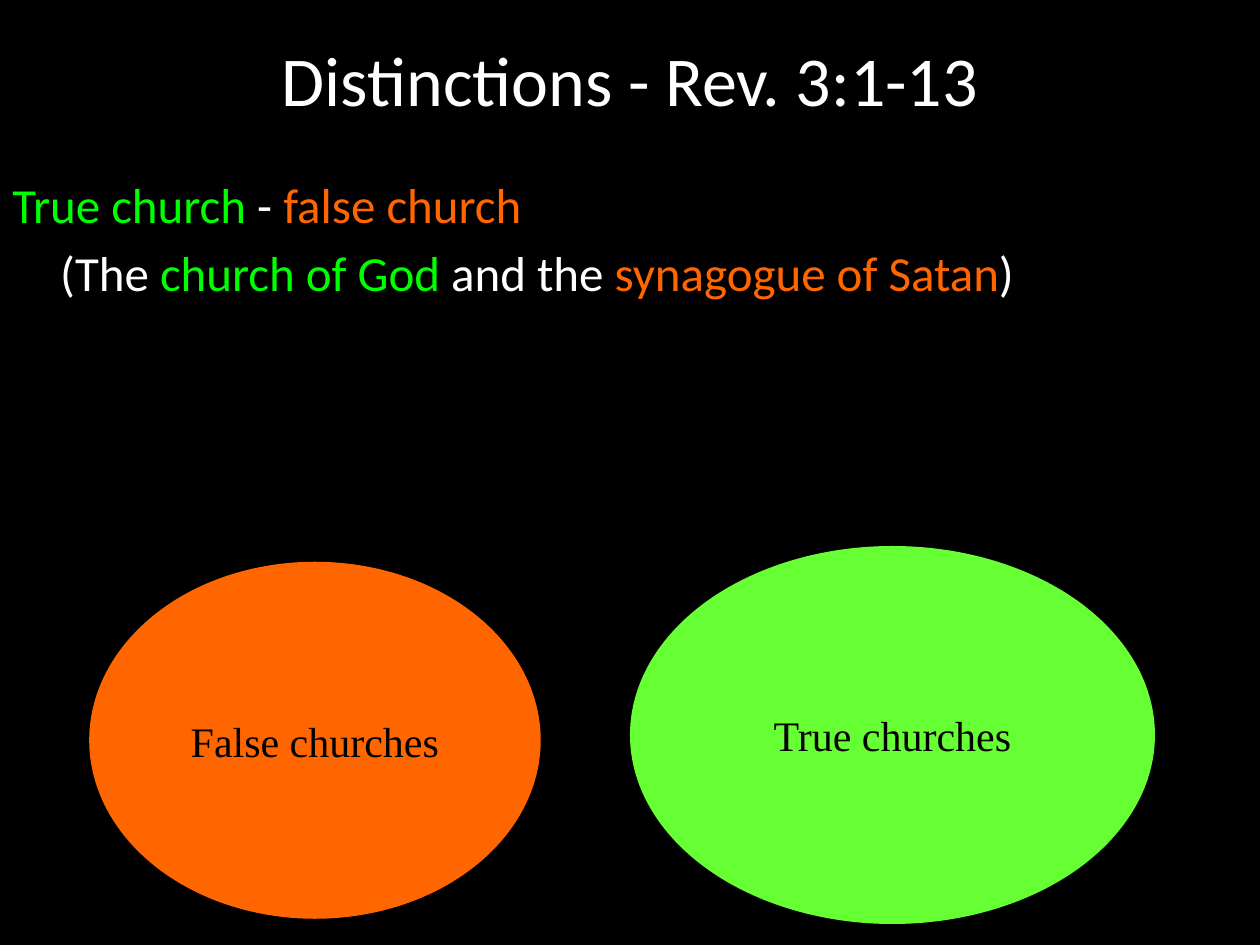
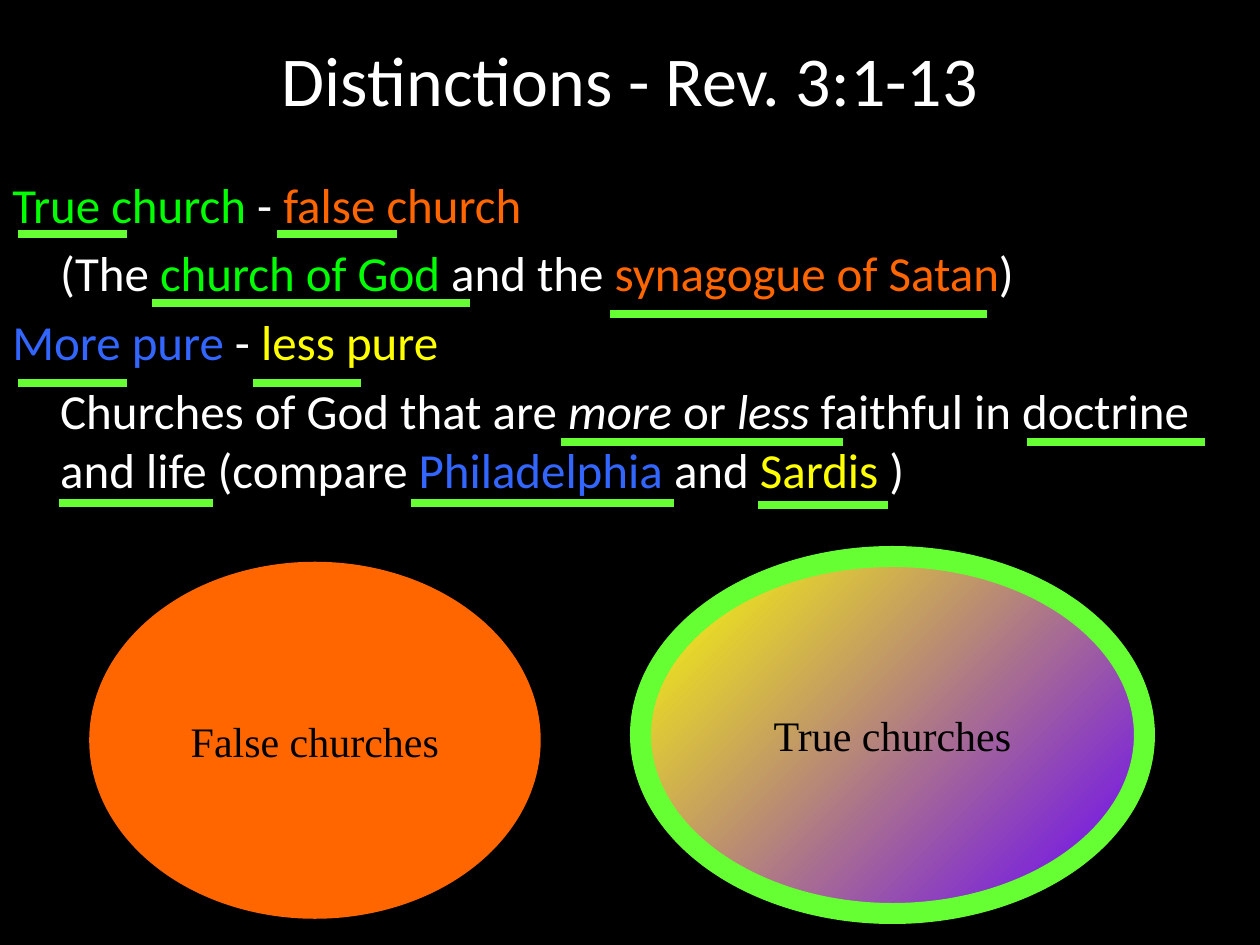
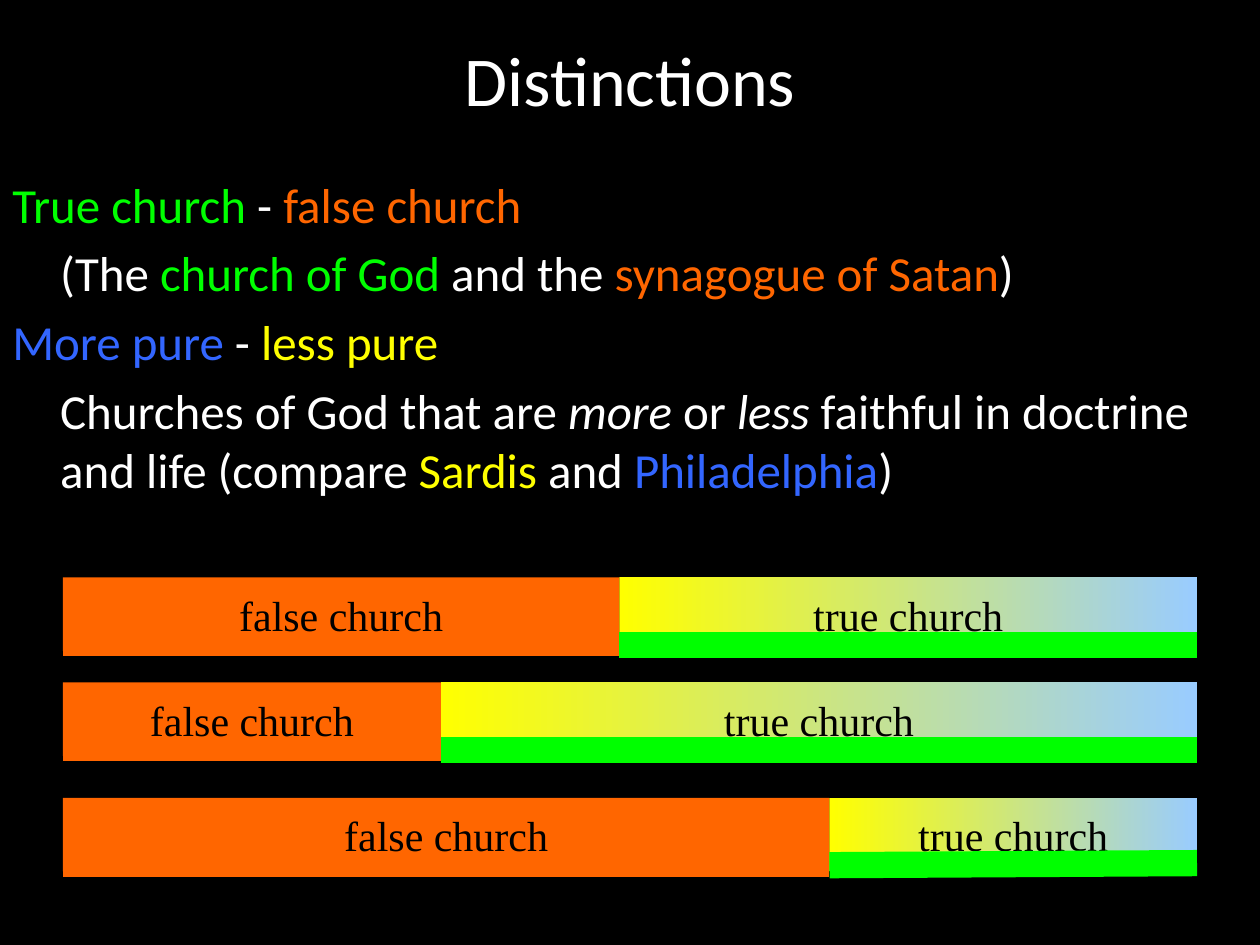
from lxml.etree import SubElement
from pptx import Presentation
from pptx.dml.color import RGBColor
from pptx.enum.shapes import MSO_CONNECTOR, MSO_SHAPE
from pptx.enum.text import MSO_ANCHOR, PP_ALIGN
from pptx.oxml.ns import qn
from pptx.util import Inches, Pt

# Every length is counted in grid units: 120 columns by 90 rows per slide.
COLUMNS, ROWS = 120, 90
UNIT = Inches(10) / COLUMNS

BLACK, WHITE = "000000", "FFFFFF"
TRUE_GREEN, BRIGHT_GREEN, FALSE_ORANGE = "00FF00", "66FF33", "FF6600"
PURE_BLUE, LESS_YELLOW = "3366FF", "FFFF00"
VIOLET, PALE_BLUE = "6600FF", "99CCFF"

TITLE_FONT = {"name": "Calibri", "size": Pt(40)}
BODY_FONT = {"name": "Calibri", "size": Pt(28)}
LABEL_FONT = {"name": "Times New Roman", "size": Pt(24)}


def grid(*counts):
    return [round(count * UNIT) for count in counts]


def write(paragraph, runs, font_format, align=PP_ALIGN.LEFT):
    """Add runs of (text, colour[, italic]) to a paragraph."""
    paragraph.alignment = align
    for text, colour, *italic in runs:
        run = paragraph.add_run()
        run.text = text
        run.font.color.rgb = RGBColor.from_string(colour)
        for attribute, value in {**font_format, "italic": bool(italic)}.items():
            setattr(run.font, attribute, value)


# Body text: (is a heading, runs)
true_false = [
    (True, [("True church", TRUE_GREEN), (" - ", WHITE), ("false church", FALSE_ORANGE)]),
    (False, [("(The ", WHITE), ("church of God", TRUE_GREEN), (" and the ", WHITE),
             ("synagogue of Satan", FALSE_ORANGE), (")", WHITE)]),
]
purity_heading = (True, [("More pure", PURE_BLUE), (" - ", WHITE), ("less pure", LESS_YELLOW)])
faithfulness = [("Churches of God that are ", WHITE), ("more ", WHITE, "italic"), ("or ", WHITE),
                ("less ", WHITE, "italic"), ("faithful in doctrine and life (compare ", WHITE)]
philadelphia_first = [("Philadelphia ", PURE_BLUE), ("and ", WHITE),
                      ("Sardis", LESS_YELLOW), (" )", WHITE)]
sardis_first = [("Sardis", LESS_YELLOW), (" and ", WHITE),
                ("Philadelphia", PURE_BLUE), (")", WHITE)]

# Areas: (preset, box, fill colours, outline colour, outline width, label)
false_circle = (MSO_SHAPE.OVAL, (9, 54, 42, 33), [FALSE_ORANGE], FALSE_ORANGE, 6, "False churches")
true_circle, mixed_circle = [
    (MSO_SHAPE.OVAL, (61, 53, 48, 34), fills, BRIGHT_GREEN, 12, "True churches")
    for fills in ([BRIGHT_GREEN], [LESS_YELLOW, VIOLET])
]

# Underlines: (row, [(first column, last column), ...])
underlined = [
    (22.3, [(1.7, 12.1), (26.4, 37.8)]),
    (28.9, [(14.5, 44.8)]),
    (29.9, [(58.1, 94)]),
    (36.5, [(1.7, 12.1), (24.1, 34.4)]),
    (42.1, [(53.4, 80.3), (97.8, 114.8)]),
    (47.9, [(5.6, 20.3), (39.1, 64.2)]),
    (48.1, [(72.2, 84.6)]),
]
underlines = [(start, row, end, row, BRIGHT_GREEN, 4.5)
              for row, spans in underlined for start, end in spans]

# Bars divided between the false and the true church: (top, division, rise of the green line)
BAR_LEFT, BAR_RIGHT, BAR_HEIGHT, GREEN_OFFSET = 6, 114, 7, 6.4
bar_areas, bar_lines = [], []
for top, division, rise in [(55, 59, 0), (65, 42, 0), (76, 79, 0.2)]:
    bottom, green_row = top + BAR_HEIGHT, top + GREEN_OFFSET
    bar_areas += [
        (MSO_SHAPE.RECTANGLE, (BAR_LEFT, top, division - BAR_LEFT, BAR_HEIGHT),
         [FALSE_ORANGE], None, 0, "false church"),
        (MSO_SHAPE.RECTANGLE, (division, top, BAR_RIGHT - division, BAR_HEIGHT),
         [LESS_YELLOW, PALE_BLUE], None, 0, "true church"),
    ]
    bar_lines += [
        (BAR_LEFT, bottom, division, bottom, FALSE_ORANGE, 6),
        (division, green_row, BAR_RIGHT, green_row - rise, TRUE_GREEN, 15),
    ]

# Slides: (title, body, areas, lines)
slides = [
    ("Distinctions - Rev. 3:1-13", true_false, [false_circle, true_circle], []),
    ("Distinctions - Rev. 3:1-13",
     true_false + [purity_heading, (False, faithfulness + philadelphia_first)],
     [false_circle, mixed_circle], underlines),
    ("Distinctions",
     true_false + [purity_heading, (False, faithfulness + sardis_first)],
     bar_areas, bar_lines),
]

deck = Presentation()
deck.slide_width, deck.slide_height = grid(COLUMNS, ROWS)
backdrop = deck.slide_master.background.fill
backdrop.solid()
backdrop.fore_color.rgb = RGBColor.from_string(BLACK)

for title, body, areas, lines in slides:
    slide = deck.slides.add_slide(deck.slide_layouts[6])

    heading = slide.shapes.add_textbox(*grid(0, 0, COLUMNS, 15)).text_frame
    heading.word_wrap = True
    heading.vertical_anchor = MSO_ANCHOR.MIDDLE
    write(heading.paragraphs[0], [(title, WHITE)], TITLE_FONT, PP_ALIGN.CENTER)

    points = slide.shapes.add_textbox(*grid(0, 16, COLUMNS, ROWS - 16)).text_frame
    points.word_wrap = True
    for number, (is_heading, runs) in enumerate(body):
        point = points.add_paragraph() if number else points.paragraphs[0]
        point.space_before = Pt(5.6)
        indent = Inches(0.38)
        properties = point._p.get_or_add_pPr()
        properties.set("marL", str(indent))
        properties.set("indent", str(-indent if is_heading else 0))
        write(point, runs, BODY_FONT)

    for preset, box, fills, outline, width, label in areas:
        area = slide.shapes.add_shape(preset, *grid(*box))
        area.shadow.inherit = False
        if len(fills) == 1:
            area.fill.solid()
            area.fill.fore_color.rgb = RGBColor.from_string(fills[0])
        else:
            area.fill.gradient()
            area.fill.gradient_angle = 315 if preset == MSO_SHAPE.OVAL else 0
            for stop, colour in zip(area.fill.gradient_stops, fills):
                stop.color.rgb = RGBColor.from_string(colour)
        if outline:
            area.line.color.rgb = RGBColor.from_string(outline)
            area.line.width = Pt(width)
        else:
            area.line.fill.background()
        area.text_frame.word_wrap = False
        area.text_frame.vertical_anchor = MSO_ANCHOR.MIDDLE
        write(area.text_frame.paragraphs[0], [(label, BLACK)], LABEL_FONT, PP_ALIGN.CENTER)

    for *ends, colour, width in lines:
        stroke = slide.shapes.add_connector(MSO_CONNECTOR.STRAIGHT, *grid(*ends))
        stroke.line.color.rgb = RGBColor.from_string(colour)
        stroke.line.width = Pt(width)
        SubElement(stroke._element.spPr, qn("a:effectLst"))

deck.save("out.pptx")
